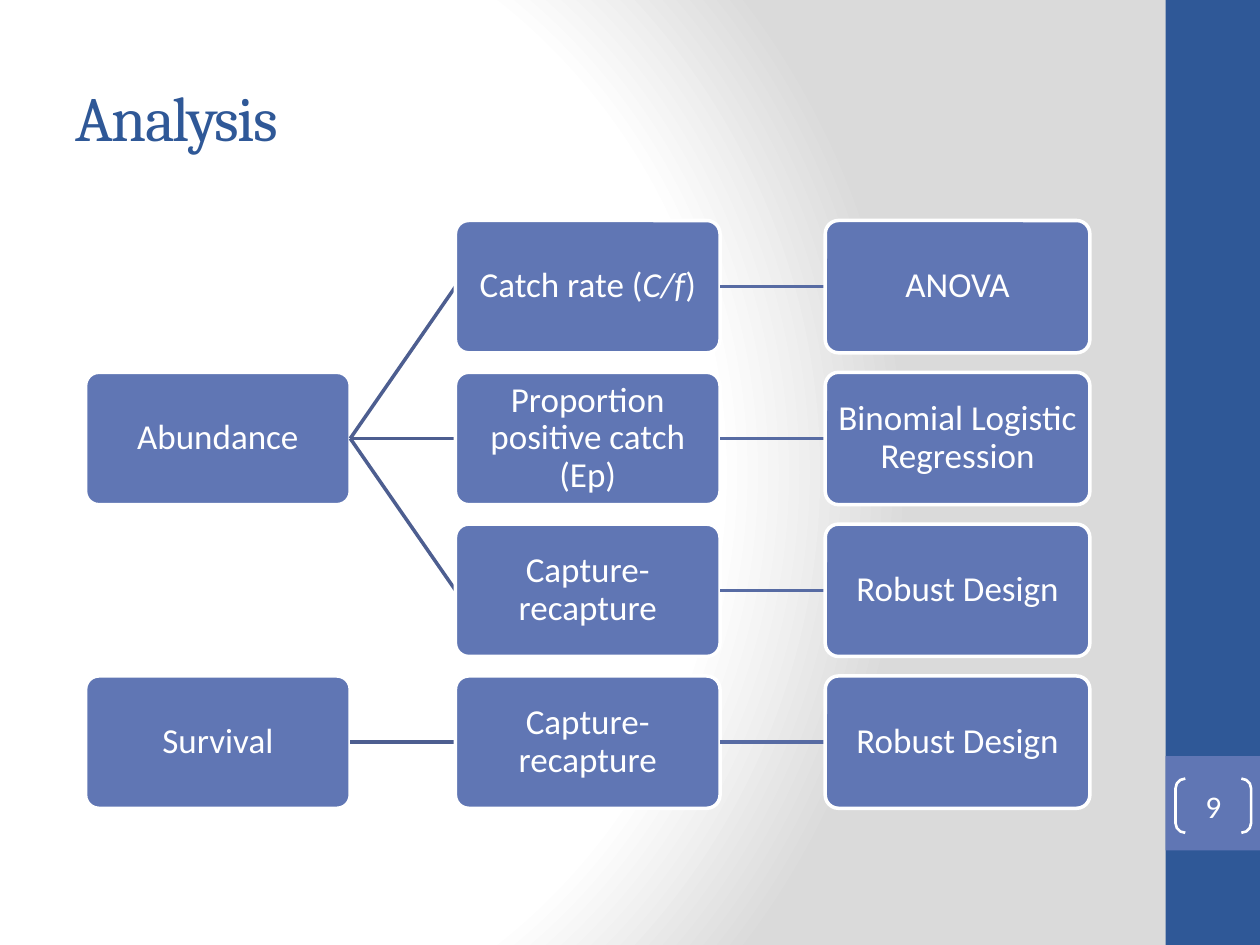
from pptx import Presentation
from pptx.dml.color import RGBColor
from pptx.enum.shapes import MSO_CONNECTOR, MSO_SHAPE
from pptx.enum.text import MSO_ANCHOR, PP_ALIGN
from pptx.oxml import parse_xml
from pptx.oxml.ns import nsdecls
from pptx.oxml.xmlchemy import OxmlElement
from pptx.util import Inches, Pt

NAVY, BLUE, WHITE = "2F5897", "6076B4", "FFFFFF"
WIDE, HIGH = 2.1, 1.05
LEFT, TOP = 0.68, 1.75
STEP_X, STEP_Y = 2.935, 1.205


def color(text):
    return RGBColor.from_string(text)


class Deck:
    def __init__(self):
        self.prs = Presentation()
        self.prs.slide_width, self.prs.slide_height = Inches(10), Inches(7.5)
        self.slide = self.prs.slides.add_slide(self.prs.slide_layouts[5])

    def backdrop(self, stops, rect):
        marks = "".join(
            f'<a:gs pos="{pos * 1000}"><a:srgbClr val="{tone}"/></a:gs>'
            for pos, tone in stops)
        sides = " ".join(f'{side}="{part * 1000}"' for side, part in zip("ltrb", rect))
        self.slide.element.cSld.insert(0, parse_xml(
            f'<p:bg {nsdecls("p", "a")}><p:bgPr><a:gradFill rotWithShape="1">'
            f'<a:gsLst>{marks}</a:gsLst><a:path path="circle">'
            f'<a:fillToRect {sides}/></a:path></a:gradFill><a:effectLst/></p:bgPr></p:bg>'))

    def title(self, text, *place):
        shape = self.slide.shapes.title
        shape.left, shape.top, shape.width, shape.height = map(Inches, place)
        frame = shape.text_frame
        frame.text = text
        frame.vertical_anchor = MSO_ANCHOR.MIDDLE
        para = frame.paragraphs[0]
        para.alignment = PP_ALIGN.LEFT
        self.font(para, "Cambria", 36, NAVY)
        para.runs[0].font._element.set("spc", "-100")

    def font(self, para, name, size, tone):
        para.font.name, para.font.size = name, Pt(size)
        para.font.color.rgb = color(tone)

    def shape(self, kind, *place, fill=None, line=None, weight=2, adjust=None):
        shape = self.slide.shapes.add_shape(kind, *map(Inches, place))
        shape.shadow.inherit = False
        if fill:
            shape.fill.solid()
            shape.fill.fore_color.rgb = color(fill)
        else:
            shape.fill.background()
        if line:
            shape.line.color.rgb = color(line)
            shape.line.width = Pt(weight)
        else:
            shape.line.fill.background()
        if adjust:
            shape.adjustments[0] = adjust
        return shape

    def label(self, shape, text, size, inset=0, spacing=1):
        """Write centred text; parts between asterisks are italic."""
        frame = shape.text_frame
        frame.word_wrap = True
        frame.vertical_anchor = MSO_ANCHOR.MIDDLE
        frame.margin_left = frame.margin_right = Inches(inset)
        frame.margin_top = frame.margin_bottom = Inches(inset)
        para = frame.paragraphs[0]
        para.alignment, para.line_spacing = PP_ALIGN.CENTER, spacing
        self.font(para, "Calibri", size, WHITE)
        for i, part in enumerate(text.split("*")):
            run = para.add_run()
            run.text = part
            if i % 2:
                run.font.italic = True

    def node(self, text, col, row):
        box = self.shape(MSO_SHAPE.ROUNDED_RECTANGLE, LEFT + col * STEP_X,
                         TOP + row * STEP_Y, WIDE, HIGH,
                         fill=BLUE, line=WHITE, adjust=0.1)
        self.label(box, text, 20, inset=0.04, spacing=0.9)
        return box

    def link(self, start, end, tone):
        """Join two nodes, with the line beneath the end node."""
        line = self.slide.shapes.add_connector(MSO_CONNECTOR.STRAIGHT, 0, 0, 0, 0)
        line.begin_connect(start, 3)
        line.end_connect(end, 1)
        line.line.color.rgb = color(tone)
        line.line.width = Pt(2)
        line.element.spPr.append(OxmlElement("a:effectLst"))
        end.element.addprevious(line.element)


def main():
    deck = Deck()
    deck.backdrop([(0, WHITE), (75, WHITE), (100, "DADADA")], (20, 50, 100, 50))
    deck.shape(MSO_SHAPE.RECTANGLE, 9.25, 0, 0.75, 7.5, fill=NAVY)
    deck.shape(MSO_SHAPE.RECTANGLE, 9.25, 6, 0.75, 0.75, fill=BLUE)
    deck.title("Analysis", 0.5, 0.3, 8.33, 1.25)

    # Root, its row, and (measure, method) pairs from their first row down
    trees = [
        ("Abundance", 1, 0, [("Catch rate (*C/f*)", "ANOVA"),
                             ("Proportion positive catch (Ep)",
                              "Binomial Logistic Regression"),
                             ("Capture-recapture", "Robust Design")]),
        ("Survival", 3, 3, [("Capture-recapture", "Robust Design")]),
    ]
    for name, level, first, pairs in trees:
        root = deck.node(name, 0, level)
        for row, (measure, method) in enumerate(pairs, first):
            mid = deck.node(measure, 1, row)
            leaf = deck.node(method, 2, row)
            deck.link(root, mid, "4D5E90")
            deck.link(mid, leaf, "576BA3")

    page = deck.shape(MSO_SHAPE.DOUBLE_BRACKET, 9.33, 6.18, 0.6, 0.43,
                      line=WHITE, weight=1.5, adjust=0.18)
    deck.label(page, "9", 18)
    deck.prs.save("out.pptx")


if __name__ == "__main__":
    main()
